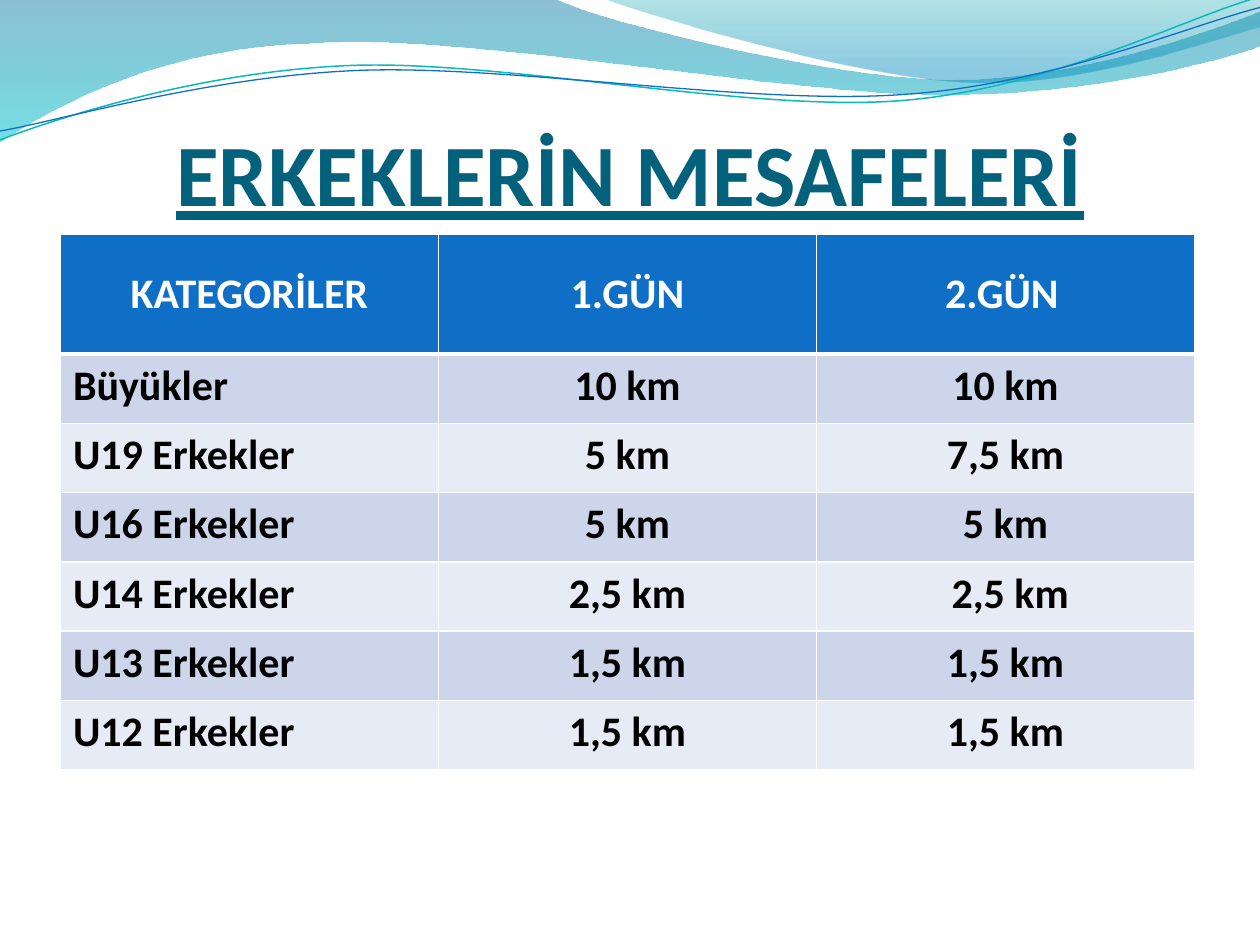
import math

from pptx import Presentation
from pptx import util as u
from pptx.dml.color import RGBColor
from pptx.enum import text
from pptx.oxml import ns, xmlchemy

FONT = "Calibri"
WHITE = RGBColor(0xFF, 0xFF, 0xFF)
BLACK = RGBColor(0, 0, 0)
TITLE_TEAL = RGBColor(0x04, 0x61, 0x7B)
BLUE = RGBColor(0x0F, 0x6F, 0xC6)
LINE_TEAL = RGBColor(0x0A, 0xB8, 0xBF)
BANDS = (RGBColor(0xCC, 0xD5, 0xEA), RGBColor(0xE7, 0xEB, 0xF5))
LINE_TILT = -2.7

# Gradient stops: position, colour, opacity in percent
DEEP_WAVE = ((0, RGBColor(0x00, 0x74, 0xA1), 45), (1, RGBColor(0x00, 0xC6, 0xCF), 55))
LIGHT_WAVE = ((0, RGBColor(0x00, 0xA1, 0xA9), 30), (0.8, RGBColor(0x00, 0x8B, 0xBF), 45))

# Outlines: a pair is a straight step, six numbers are a Bezier step
DEEP_OUTLINE = [
    (0, 0), (4.4, -0.01), (4.76, 0.17, 6.64, 0.63, 7.58, 0.63),
    (8.53, 0.63, 9.58, 0.26, 10, 0.09), (10.01, 0.36),
    (9.83, 0.44, 8.7, 0.76, 7.46, 0.75), (6.22, 0.75, 3.82, 0.28, 2.57, 0.34),
    (1.29, 0.36, 0.46, 0.83, -0.01, 1.13), (0, 0),
]
LIGHT_OUTLINE = [
    (4.79, -0.01), (5.09, 0.11, 6.82, 0.62, 7.69, 0.65),
    (8.56, 0.69, 9.61, 0.32, 10, 0.21), (10, 0), (4.79, -0.01),
]
TEAL_CURVE = [
    (0, 1.11), (0.48, 0.93, 1.58, 0.57, 2.77, 0.52),
    (3.95, 0.47, 5.93, 0.89, 7.13, 0.8), (8.33, 0.71, 9.38, 0.15, 9.98, -0.02),
]
BLUE_CURVE = [
    (0, 1.04), (0.47, 0.96, 1.64, 0.61, 2.83, 0.56),
    (4.03, 0.51, 5.97, 0.84, 7.17, 0.75), (8.36, 0.67, 9.41, 0.21, 10, 0.06),
]

HEADER = (("KATEGORİLER",), ("1.GÜN",), ("2.GÜN", " "))
DISTANCES = (
    ("Büyükler", " 10 km ", "10 km"),
    ("U19 Erkekler", "5 km", "7,5 km"),
    ("U16 Erkekler", "5 km", "5 km"),
    ("U14 Erkekler", "2,5 km", " 2,5 km"),
    ("U13 Erkekler", "1,5 km", "1,5 km"),
    ("U12 Erkekler", "1,5 km", "1,5 km"),
)


def turn(steps, center, degrees):
    """Rotate every point of the steps about the center."""
    cos, sin = math.cos(math.radians(degrees)), math.sin(math.radians(degrees))
    turned = []
    for step in steps:
        numbers = []
        for x, y in zip(step[::2], step[1::2]):
            dx, dy = x - center[0], y - center[1]
            numbers += [center[0] + dx * cos - dy * sin, center[1] + dx * sin + dy * cos]
        turned.append(tuple(numbers))
    return turned


def add_curve(slide, left, top, steps, close):
    points = [(left + u.Inches(x), top + u.Inches(y))
              for step in steps for x, y in zip(step[::2], step[1::2])]
    builder = slide.shapes.build_freeform(*points[0])
    builder.add_line_segments(points[1:], close=close)
    shape = builder.convert_to_shape()
    shape.shadow.inherit = False
    # Join each group of three control points into one Bezier step
    segments = iter(list(shape._element.spPr.iter(ns.qn("a:lnTo"))))
    for step in steps[1:]:
        segment = next(segments)
        if len(step) == 6:
            bezier = xmlchemy.OxmlElement("a:cubicBezTo")
            segment.addprevious(bezier)
            for part in (segment, next(segments), next(segments)):
                bezier.append(part[0])
                part.getparent().remove(part)
    return shape


def add_waves(slide, left, top):
    # Translucent filled waves
    for steps, stops in ((DEEP_OUTLINE, DEEP_WAVE), (LIGHT_OUTLINE, LIGHT_WAVE)):
        shape = add_curve(slide, left, top, steps, True)
        shape.line.fill.background()
        shape.fill.gradient()
        shape.fill.gradient_angle = 270
        for stop, (position, color, _) in zip(shape.fill.gradient_stops, stops):
            stop.position = position
            stop.color.rgb = color
        colors = shape._element.spPr.iter(ns.qn("a:srgbClr"))
        for element, (_, _, opacity) in zip(list(colors), stops):
            alpha = xmlchemy.OxmlElement("a:alpha")
            alpha.set("val", str(opacity * 1000))
            element.append(alpha)
    # Thin tilted lines
    for steps, center, color, width in ((TEAL_CURVE, (4.99, 0.57), LINE_TEAL, 0.85),
                                        (BLUE_CURVE, (5, 0.59), BLUE, 0.75)):
        shape = add_curve(slide, left, top, turn(steps, center, -LINE_TILT), False)
        shape.rotation = LINE_TILT
        shape.fill.background()
        shape.line.color.rgb = color
        shape.line.width = u.Pt(width)


def add_run(paragraph, words, size, color):
    run = paragraph.add_run()
    run.text = words
    font = run.font
    font.name, font.size, font.bold = FONT, u.Pt(size), True
    font.color.rgb = color
    return run


def place_title(slide, left, top, width, height):
    title = slide.shapes.title
    title.left, title.top, title.width, title.height = left, top, width, height
    frame = title.text_frame
    frame.word_wrap = True
    frame.auto_size = text.MSO_AUTO_SIZE.NONE
    frame.vertical_anchor = text.MSO_ANCHOR.BOTTOM
    frame.margin_left = frame.margin_right = frame.margin_bottom = 0
    frame.margin_top = u.Inches(0.05)
    paragraph = frame.paragraphs[0]
    paragraph.alignment = text.PP_ALIGN.CENTER
    add_run(paragraph, "ERKEKLERİN MESAFELERİ", 50, TITLE_TEAL).font.underline = True
    # Bring the title in front of the waves
    slide.shapes._spTree.append(title._element)


def set_borders(cell, top, bottom):
    properties = cell._tc.get_or_add_tcPr()
    for index, (side, width) in enumerate((("L", 1), ("R", 1), ("T", top), ("B", bottom))):
        line = xmlchemy.OxmlElement(f"a:ln{side}")
        line.set("w", str(u.Pt(width)))
        fill = xmlchemy.OxmlElement("a:solidFill")
        color = xmlchemy.OxmlElement("a:srgbClr")
        color.set("val", str(WHITE))
        fill.append(color)
        line.append(fill)
        properties.insert(index, line)


def add_distances(slide, left, top, width, height):
    rows = [HEADER] + [[(words,) for words in row] for row in DISTANCES]
    table = slide.shapes.add_table(len(rows), len(HEADER), left, top, width, height).table
    header_height = u.Inches(0.95)
    for r, row in enumerate(rows):
        is_header = r == 0
        table.rows[r].height = (header_height if is_header
                                else (height - header_height) // len(DISTANCES))
        for c, runs in enumerate(row):
            cell = table.cell(r, c)
            cell.fill.solid()
            cell.fill.fore_color.rgb = BLUE if is_header else BANDS[(r - 1) % 2]
            set_borders(cell, 3 if r == 1 else 1, 3 if is_header else 1)
            if is_header:
                cell.vertical_anchor = text.MSO_ANCHOR.MIDDLE
            paragraph = cell.text_frame.paragraphs[0]
            if is_header or c > 0:
                paragraph.alignment = text.PP_ALIGN.CENTER
            for words in runs:
                add_run(paragraph, words, 24 if words.strip() else 18,
                        WHITE if is_header else BLACK)


def main():
    presentation = Presentation()
    presentation.slide_width, presentation.slide_height = u.Inches(10), u.Inches(7.5)
    slide = presentation.slides.add_slide(presentation.slide_layouts[5])
    slide.background.fill.solid()
    slide.background.fill.fore_color.rgb = WHITE
    add_waves(slide, u.Inches(0), u.Inches(0))
    place_title(slide, u.Inches(0.5), u.Inches(0.77), u.Inches(9), u.Inches(1.01))
    add_distances(slide, u.Inches(0.48), u.Inches(1.86), u.Inches(9), u.Inches(4.25))
    presentation.save("out.pptx")


if __name__ == "__main__":
    main()
